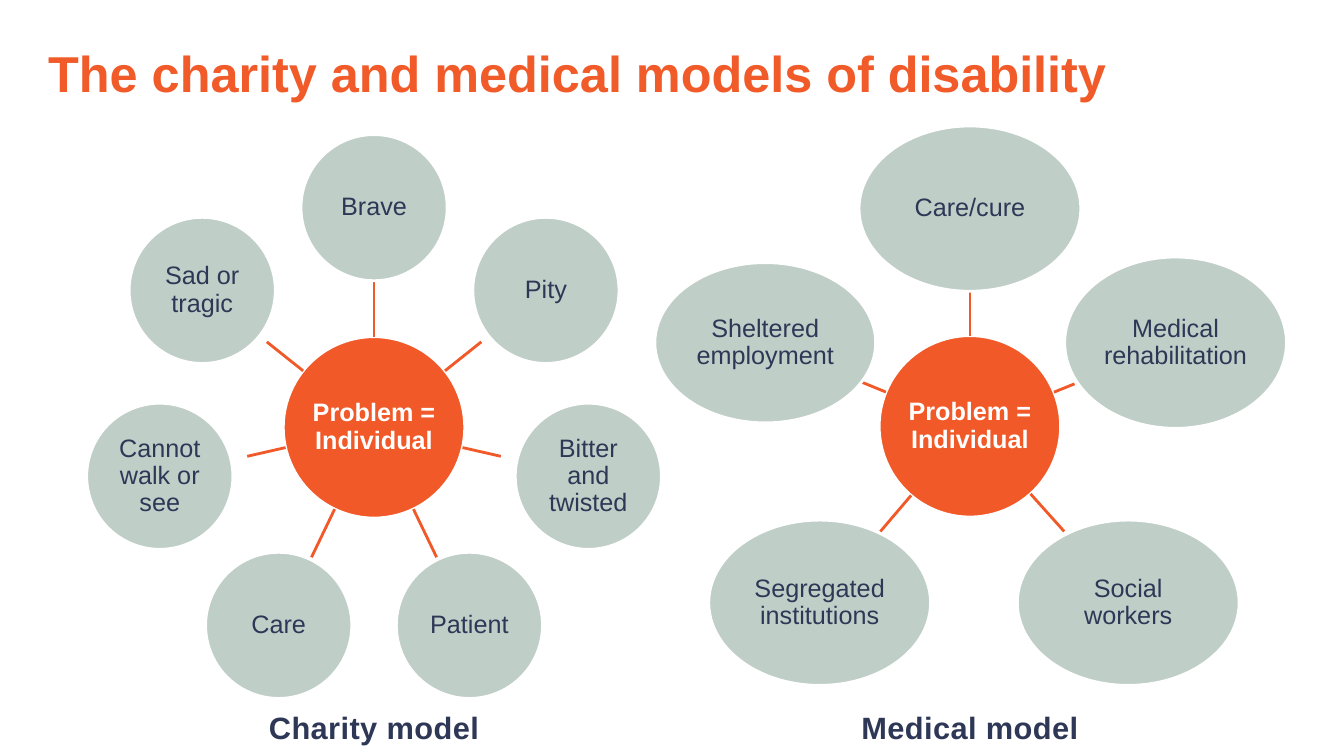
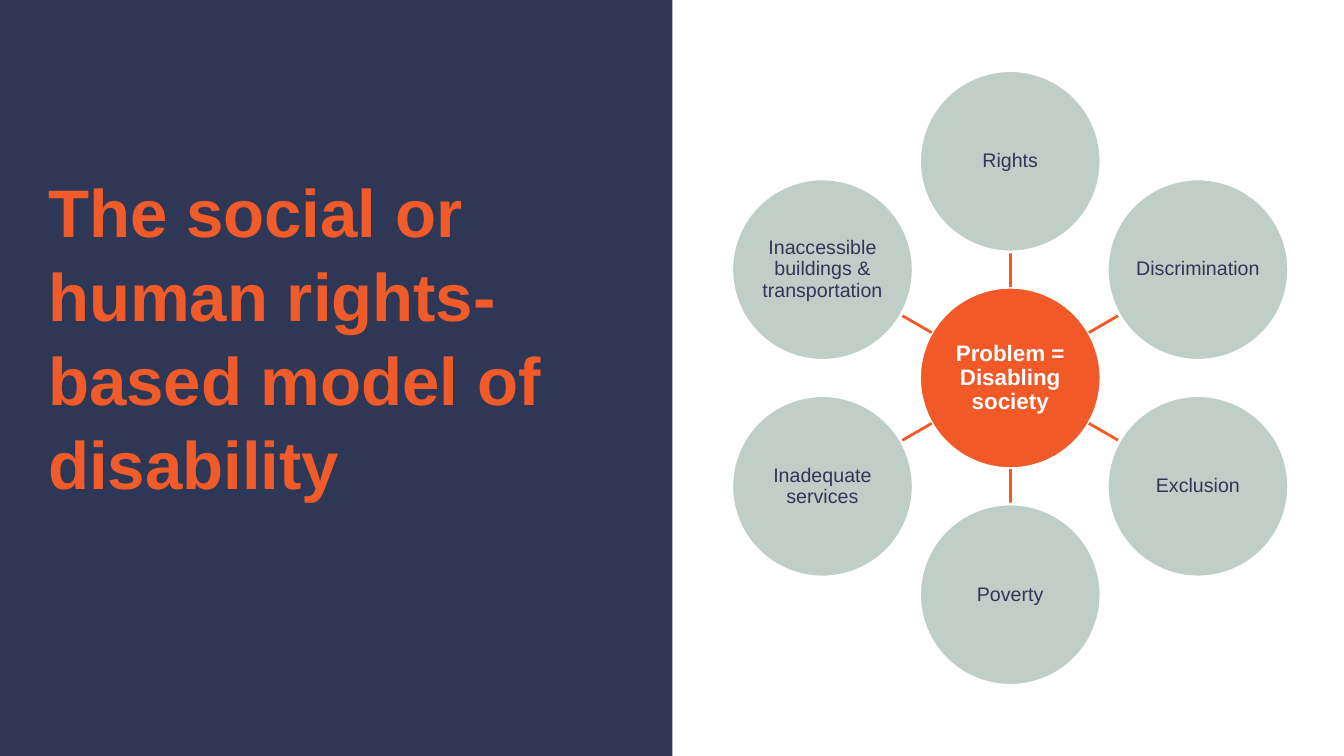
import math

from lxml import etree
from pptx import Presentation
from pptx.dml.color import RGBColor
from pptx.enum.shapes import MSO_CONNECTOR, MSO_SHAPE
from pptx.enum.text import MSO_ANCHOR, PP_ALIGN
from pptx.oxml.ns import qn
from pptx.util import Inches, Pt

ORANGE = RGBColor(0xF1, 0x59, 0x28)
TITLE_ORANGE = RGBColor(0xF1, 0x5A, 0x29)
SAGE = RGBColor(0xC0, 0xCE, 0xC8)
NAVY = RGBColor(0x2E, 0x38, 0x56)
WHITE = RGBColor(0xFF, 0xFF, 0xFF)
FONT = "Arial"
OVAL = MSO_SHAPE.OVAL
RECTANGLE = MSO_SHAPE.RECTANGLE
STRAIGHT = MSO_CONNECTOR.STRAIGHT
TOP, MIDDLE, BOTTOM = MSO_ANCHOR.TOP, MSO_ANCHOR.MIDDLE, MSO_ANCHOR.BOTTOM
LEFT, CENTER = PP_ALIGN.LEFT, PP_ALIGN.CENTER
HUB_SIZE = 1.8


def ring(center, radius, count):
    cx, cy = center
    angles = [2 * math.pi * i / count for i in range(count)]
    return [(cx + radius * math.sin(a), cy - radius * math.cos(a)) for a in angles]


class Deck:
    def __init__(self):
        self.prs = Presentation()
        self.prs.slide_width = Inches(13.33)
        self.prs.slide_height = Inches(7.5)
        self.s = None

    def new_slide(self):
        self.s = self.prs.slides.add_slide(self.prs.slide_layouts[6])

    def set_text(self, sp, text, size, color, bold, align, anchor, spacing, inset):
        tf = sp.text_frame
        tf.word_wrap = True
        tf.vertical_anchor = anchor
        tf.margin_left = tf.margin_right = Inches(inset[0])
        tf.margin_top = tf.margin_bottom = Inches(inset[1])
        p = tf.paragraphs[0]
        r = p.add_run()
        r.text = text
        p.alignment = align
        p.line_spacing = spacing
        p.font.name = FONT
        p.font.size = Pt(size)
        p.font.bold = bold
        p.font.color.rgb = color
        return r

    def title(self, text, size, left, top, width, height):
        sp = self.s.shapes.add_textbox(Inches(left), Inches(top), Inches(width), Inches(height))
        self.set_text(sp, text, size, TITLE_ORANGE, True, LEFT, TOP, 1.04, (0.1, 0.1))

    def caption(self, text, center_x):
        width = 3.22
        sp = self.s.shapes.add_textbox(
            Inches(center_x - width / 2), Inches(6.86), Inches(width), Inches(0.59))
        r = self.set_text(sp, text, 22, NAVY, True, CENTER, BOTTOM, 0.9, (0.1, 0.05))
        r._r.get_or_add_rPr().set("spc", "30")

    def panel(self, left, top, width, height):
        sp = self.s.shapes.add_shape(
            RECTANGLE, Inches(left), Inches(top), Inches(width), Inches(height))
        sp.shadow.inherit = False
        sp.fill.solid()
        sp.fill.fore_color.rgb = NAVY
        sp.line.fill.background()

    def bubble(self, text, center, size, fill, color, font_size, bold=False):
        (cx, cy), (w, h) = center, size
        sp = self.s.shapes.add_shape(
            OVAL, Inches(cx - w / 2), Inches(cy - h / 2), Inches(w), Inches(h))
        sp.shadow.inherit = False
        sp.fill.solid()
        sp.fill.fore_color.rgb = fill
        sp.line.color.rgb = WHITE
        sp.line.width = Pt(2)
        self.set_text(sp, text, font_size, color, bold, CENTER, MIDDLE, 0.9, (0.01, 0.01))

    def spoke(self, hub, target, length):
        (hx, hy), (tx, ty) = hub, target
        distance = math.dist(hub, target)
        ux, uy = (tx - hx) / distance, (ty - hy) / distance
        near = HUB_SIZE / 2
        far = near + length
        line = self.s.shapes.add_connector(
            STRAIGHT, Inches(hx + ux * near), Inches(hy + uy * near),
            Inches(hx + ux * far), Inches(hy + uy * far))
        line.line.color.rgb = ORANGE
        line.line.width = Pt(2)
        etree.SubElement(line._element.spPr, qn("a:effectLst"))

    def radial(self, hub_text, hub, hub_font, font_size, labels, centers, sizes, lengths):
        self.bubble(hub_text, hub, (HUB_SIZE, HUB_SIZE), ORANGE, WHITE, hub_font, True)
        for text, center, size, length in zip(labels, centers, sizes, lengths):
            self.spoke(hub, center, length)
            self.bubble(text, center, size, SAGE, NAVY, font_size)


def charity_and_medical(deck):
    deck.new_slide()
    deck.title("The charity and medical models of disability", 36, 0.38, 0.29, 11.42, 1.45)

    charity = (3.71, 4.24)
    labels = ["Brave", "Pity", "Bitter and twisted", "Patient", "Care",
              "Cannot walk or see", "Sad or tragic"]
    deck.radial("Problem = Individual", charity, 18, 18, labels,
                ring(charity, 2.18, len(labels)), [(1.45, 1.45)] * len(labels),
                [0.55, 0.46, 0.39, 0.53, 0.53, 0.39, 0.46])

    medical = (9.62, 4.23)
    labels = ["Care/cure", "Medical rehabilitation", "Social workers",
              "Segregated institutions", "Sheltered employment"]
    centers = [(9.62, 2.07), (11.66, 3.4), (11.19, 5.98), (8.13, 5.98), (7.59, 3.4)]
    sizes = [(2.2, 1.64), (2.2, 1.7), (2.2, 1.64), (2.2, 1.64), (2.19, 1.59)]
    deck.radial("Problem = Individual", medical, 18, 18, labels, centers, sizes,
                [0.45, 0.22, 0.5, 0.47, 0.26])

    deck.caption("Medical model", medical[0])
    deck.caption("Charity model", charity[0])


def social(deck):
    deck.new_slide()
    deck.panel(0, 0, 6.67, 7.5)
    deck.title("The social or human rights-based model of disability", 48,
               0.38, 1.56, 5.93, 4.45)
    hub = (10.02, 3.75)
    labels = ["Rights", "Discrimination", "Exclusion", "Poverty",
              "Inadequate services", "Inaccessible buildings & transportation"]
    count = len(labels)
    deck.radial("Problem = Disabling society", hub, 16, 14, labels,
                ring(hub, 2.15, count), [(1.8, 1.8)] * count, [0.35] * count)


def main():
    deck = Deck()
    charity_and_medical(deck)
    social(deck)
    deck.prs.save("out.pptx")


if __name__ == "__main__":
    main()
